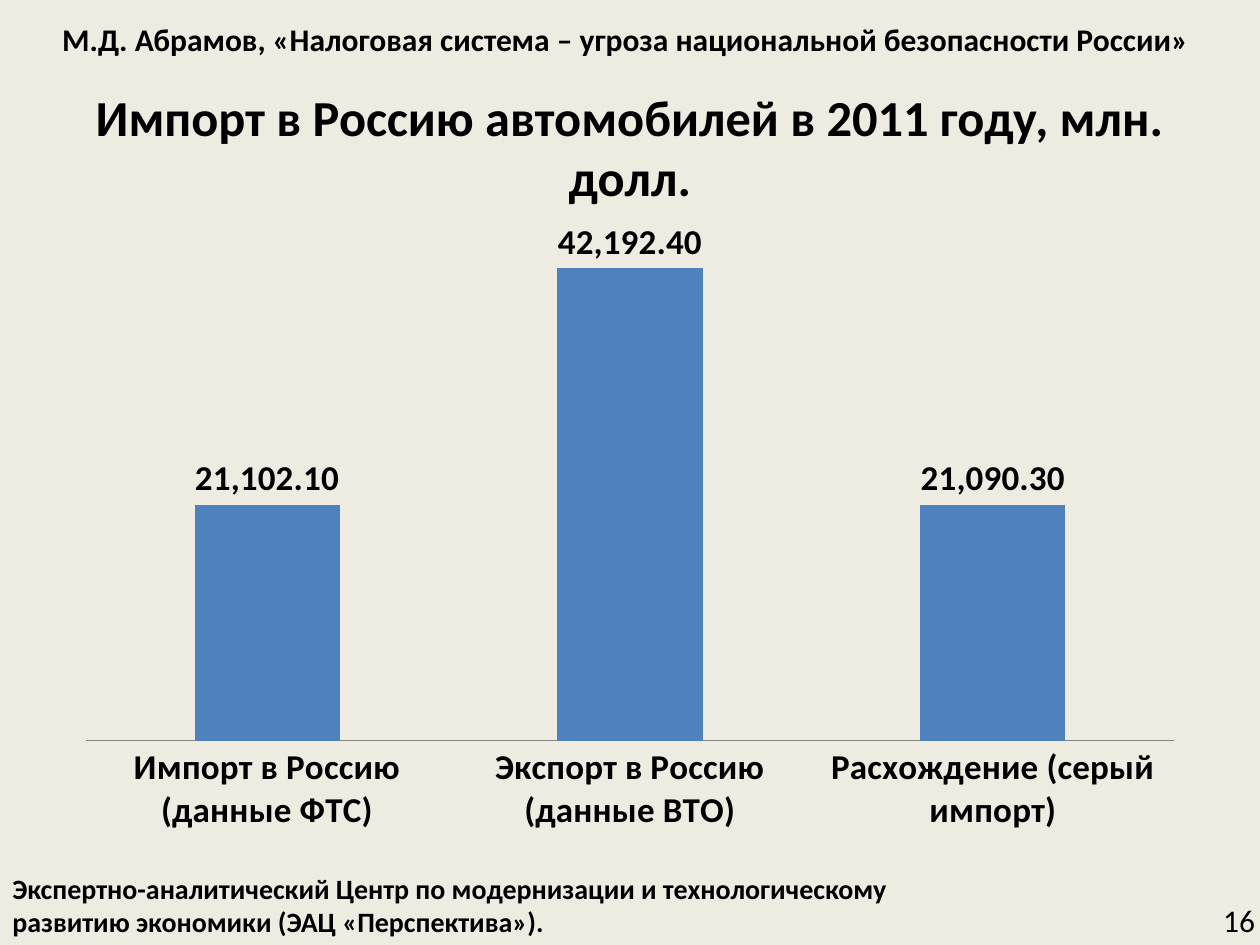
"""Build a slide with a column chart of car imports to Russia in 2011."""
import pptx
import pptx.chart.data
import pptx.dml.color
import pptx.enum.chart
import pptx.enum.text
import pptx.util

Inches = pptx.util.Inches
Pt = pptx.util.Pt
Align = pptx.enum.text.PP_ALIGN
Anchor = pptx.enum.text.MSO_ANCHOR

WIDTH, HEIGHT = 10, 7.5
MARGIN = 0.05 * WIDTH
CONTENT_WIDTH = WIDTH - 2 * MARGIN
FOOTER_HEIGHT = 0.64
FONT = "Calibri"
BACKGROUND = pptx.dml.color.RGBColor(0xEE, 0xEC, 0xE1)
BLACK = pptx.dml.color.RGBColor(0, 0, 0)
BLUE = pptx.dml.color.RGBColor(0x4F, 0x81, 0xBD)
GRAY = pptx.dml.color.RGBColor(0x86, 0x86, 0x86)

HEADER = "М.Д. Абрамов, «Налоговая система – угроза национальной безопасности России»"
TITLE = "Импорт в Россию автомобилей в 2011 году, млн. долл."
FOOTER = [
    "Экспертно-аналитический Центр по модернизации и технологическому",
    "развитию экономики (ЭАЦ «Перспектива»).",
]
PAGE_NUMBER = "16"
IMPORTS = {
    "Импорт в Россию (данные ФТС)": 21102.1,
    "Экспорт в Россию (данные ВТО)": 42192.4,
    "Расхождение (серый импорт)": 21090.3,
}
AXIS_MAXIMUM = 45000


def format_font(font, size, bold):
    font.name = FONT
    font.size = Pt(size)
    font.bold = bold
    font.color.rgb = BLACK


def add_text(slide, lines, box, size, bold=True, align=Align.LEFT,
             anchor=Anchor.MIDDLE, wrap=True, top_inset=0.05):
    shape = slide.shapes.add_textbox(*map(Inches, box))
    frame = shape.text_frame
    frame.word_wrap = wrap
    frame.vertical_anchor = anchor
    frame.margin_top = Inches(top_inset)
    frame.text = "\n".join(lines)
    for paragraph in frame.paragraphs:
        paragraph.alignment = align
        format_font(paragraph.runs[0].font, size, bold)


def add_import_chart(slide, box):
    data = pptx.chart.data.CategoryChartData()
    data.categories = list(IMPORTS)
    data.add_series("Импорт", list(IMPORTS.values()))
    chart = slide.shapes.add_chart(
        pptx.enum.chart.XL_CHART_TYPE.COLUMN_CLUSTERED, *map(Inches, box), data
    ).chart
    chart.has_legend = False
    chart.has_title = False
    format_font(chart.font, 10, False)

    value_axis = chart.value_axis
    value_axis.visible = False
    value_axis.has_major_gridlines = False
    value_axis.minimum_scale = 0
    value_axis.maximum_scale = AXIS_MAXIMUM

    category_axis = chart.category_axis
    category_axis.major_tick_mark = pptx.enum.chart.XL_TICK_MARK.NONE
    category_axis.format.line.color.rgb = GRAY
    format_font(category_axis.tick_labels.font, 20, True)

    plot = chart.plots[0]
    plot.vary_by_categories = False
    plot.gap_width = 150
    plot.overlap = -25
    fill = plot.series[0].format.fill
    fill.solid()
    fill.fore_color.rgb = BLUE

    plot.has_data_labels = True
    labels = plot.data_labels
    labels.show_value = True
    labels.position = pptx.enum.chart.XL_LABEL_POSITION.OUTSIDE_END
    labels.number_format = "#,##0.00"
    labels.number_format_is_linked = False
    format_font(labels.font, 20, True)


def main():
    presentation = pptx.Presentation()
    presentation.slide_width = Inches(WIDTH)
    presentation.slide_height = Inches(HEIGHT)
    slide = presentation.slides.add_slide(presentation.slide_layouts[6])
    background = slide.background.fill
    background.solid()
    background.fore_color.rgb = BACKGROUND

    add_text(slide, [TITLE], (MARGIN, 0.3, CONTENT_WIDTH, 1.25), 28.8,
             align=Align.CENTER, anchor=Anchor.TOP, top_inset=0.38)
    add_import_chart(slide, (MARGIN, 1.75, CONTENT_WIDTH, 4.95))
    add_text(slide, [PAGE_NUMBER], (9.61, HEIGHT - 0.4, 0.46, 0.4), 18,
             bold=False, anchor=Anchor.TOP, wrap=False)
    add_text(slide, FOOTER, (0, HEIGHT - FOOTER_HEIGHT, 7.27, FOOTER_HEIGHT), 16,
             wrap=False)
    add_text(slide, [HEADER], (0.12, 0, 9.69, 0.62), 18, align=Align.CENTER)
    presentation.save("out.pptx")


if __name__ == "__main__":
    main()
